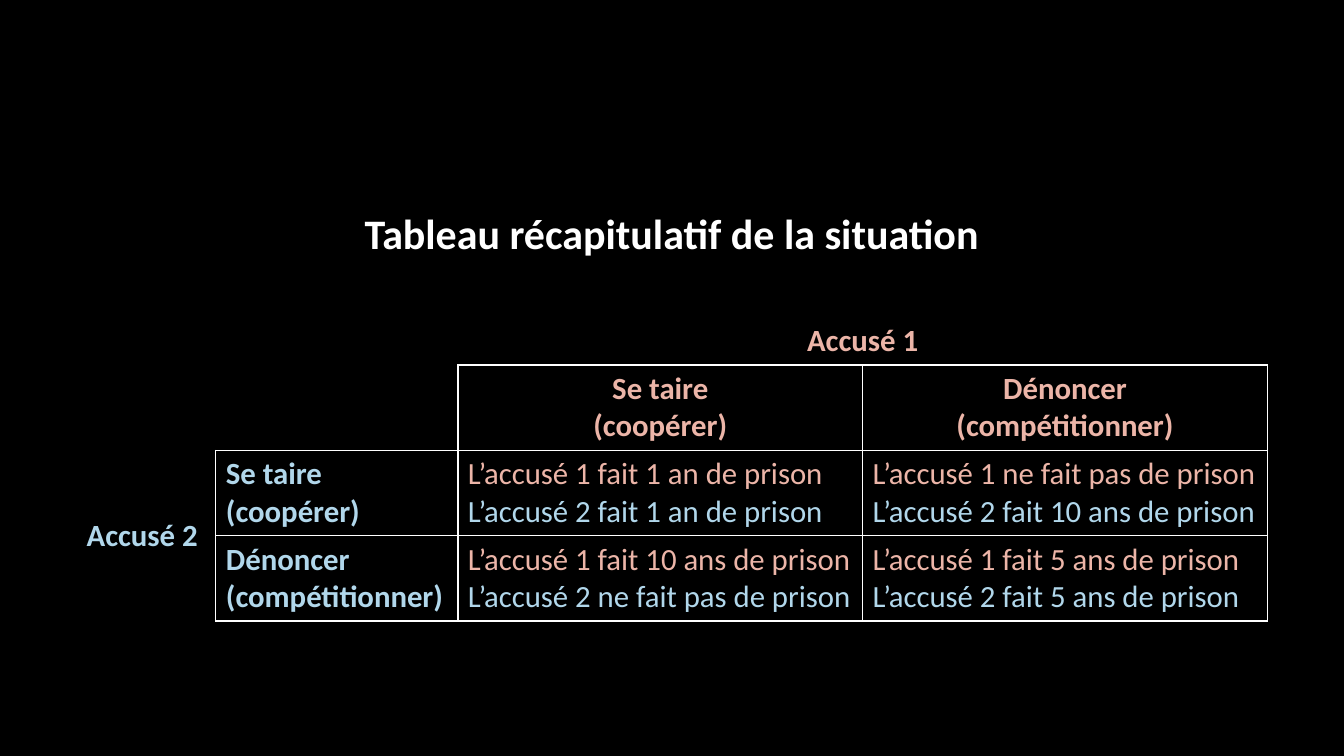
from dataclasses import dataclass

from lxml.etree import SubElement
from pptx import Presentation
from pptx.dml.color import RGBColor
from pptx.enum.text import MSO_ANCHOR, PP_ALIGN
from pptx.oxml.ns import qn
from pptx.util import Cm, Pt


@dataclass(frozen=True)
class Theme:
    background: str = "000000"
    white: str = "FFFFFF"
    accused_1: str = "ECB5A8"
    accused_2: str = "B1D7EB"
    font: str = "Calibri"
    title_size: int = 30
    body_size: int = 22
    border_width: int = 1


THEME = Theme()
COLUMN_WIDTHS = (3.51, 6.1, 10.2, 10.2)
ROW_HEIGHTS = (2.84, 1.19, 2.15, 2.15, 2.15)
CHOICES = (("Se taire", "(coopérer)"), ("Dénoncer", "(compétitionner)"))
OUTCOMES = (
    (("1 an de prison", "1 an de prison"),
     ("pas de prison", "10 ans de prison")),
    (("10 ans de prison", "pas de prison"),
     ("5 ans de prison", "5 ans de prison")),
)


def write_cell(cell, lines, colors, size=THEME.body_size, bold=True,
               align=PP_ALIGN.LEFT, anchor=MSO_ANCHOR.MIDDLE):
    """Write one paragraph per line, each in its own colour."""
    cell.vertical_anchor = anchor
    frame = cell.text_frame
    for index, (line, color) in enumerate(zip(lines, colors)):
        paragraph = frame.add_paragraph() if index else frame.paragraphs[0]
        paragraph.alignment = align
        run = paragraph.add_run()
        run.text = line
        run.font.name = THEME.font
        run.font.size = Pt(size)
        run.font.bold = bold
        run.font.color.rgb = RGBColor.from_string(color)


def is_framed(row, column):
    """Tell whether a cell belongs to the outlined payoff matrix."""
    return 2 <= row <= 4 and 1 <= column <= 3 and (row, column) != (2, 1)


def set_borders(cell, row, column):
    properties = cell._tc.get_or_add_tcPr()
    neighbours = {"a:lnL": (row, column - 1), "a:lnR": (row, column + 1),
                  "a:lnT": (row - 1, column), "a:lnB": (row + 1, column)}
    for tag, neighbour in neighbours.items():
        border = SubElement(properties, qn(tag), w=str(Pt(THEME.border_width)))
        if is_framed(row, column) or is_framed(*neighbour):
            fill = SubElement(border, qn("a:solidFill"))
            SubElement(fill, qn("a:srgbClr"), val=THEME.white)
        else:
            SubElement(border, qn("a:noFill"))


def add_grid(slide):
    """Add the unfilled table with its merges and borders."""
    grid = slide.shapes.add_table(
        len(ROW_HEIGHTS), len(COLUMN_WIDTHS), Cm(1.93), Cm(5.16),
        Cm(sum(COLUMN_WIDTHS)), Cm(sum(ROW_HEIGHTS))).table
    grid.first_row = grid.horz_banding = False
    for column, width in zip(grid.columns, COLUMN_WIDTHS):
        column.width = Cm(width)
    for row, height in zip(grid.rows, ROW_HEIGHTS):
        row.height = Cm(height)
    for row in range(len(ROW_HEIGHTS)):
        for column in range(len(COLUMN_WIDTHS)):
            cell = grid.cell(row, column)
            set_borders(cell, row, column)
            cell.fill.background()
    for first, last in (((0, 0), (0, 3)), ((1, 2), (1, 3)), ((3, 0), (4, 0))):
        grid.cell(*first).merge(grid.cell(*last))
    return grid


def outcome_line(accused, sentence):
    verb = "ne fait" if sentence.startswith("pas") else "fait"
    return f"L’accusé {accused} {verb} {sentence}"


def write_headings(grid):
    write_cell(grid.cell(0, 0), ["Tableau récapitulatif de la situation"],
               [THEME.white], size=THEME.title_size, align=PP_ALIGN.CENTER,
               anchor=MSO_ANCHOR.TOP)
    write_cell(grid.cell(1, 2), ["Accusé 1"], [THEME.accused_1],
               align=PP_ALIGN.CENTER)
    write_cell(grid.cell(3, 0), ["Accusé 2"], [THEME.accused_2])
    for index, choice in enumerate(CHOICES):
        write_cell(grid.cell(2, 2 + index), choice, [THEME.accused_1] * 2,
                   align=PP_ALIGN.CENTER)
        write_cell(grid.cell(3 + index, 1), choice, [THEME.accused_2] * 2)


def write_outcomes(grid):
    for row, outcomes in enumerate(OUTCOMES, start=3):
        for column, sentences in enumerate(outcomes, start=2):
            lines = [outcome_line(accused, sentence)
                     for accused, sentence in enumerate(sentences, start=1)]
            write_cell(grid.cell(row, column), lines,
                       [THEME.accused_1, THEME.accused_2], bold=False)


def main():
    presentation = Presentation()
    presentation.slide_width = Cm(33.87)
    presentation.slide_height = Cm(19.05)
    slide = presentation.slides.add_slide(presentation.slide_layouts[6])
    background = slide.background.fill
    background.solid()
    background.fore_color.rgb = RGBColor.from_string(THEME.background)
    grid = add_grid(slide)
    write_headings(grid)
    write_outcomes(grid)
    presentation.save("out.pptx")


if __name__ == "__main__":
    main()
